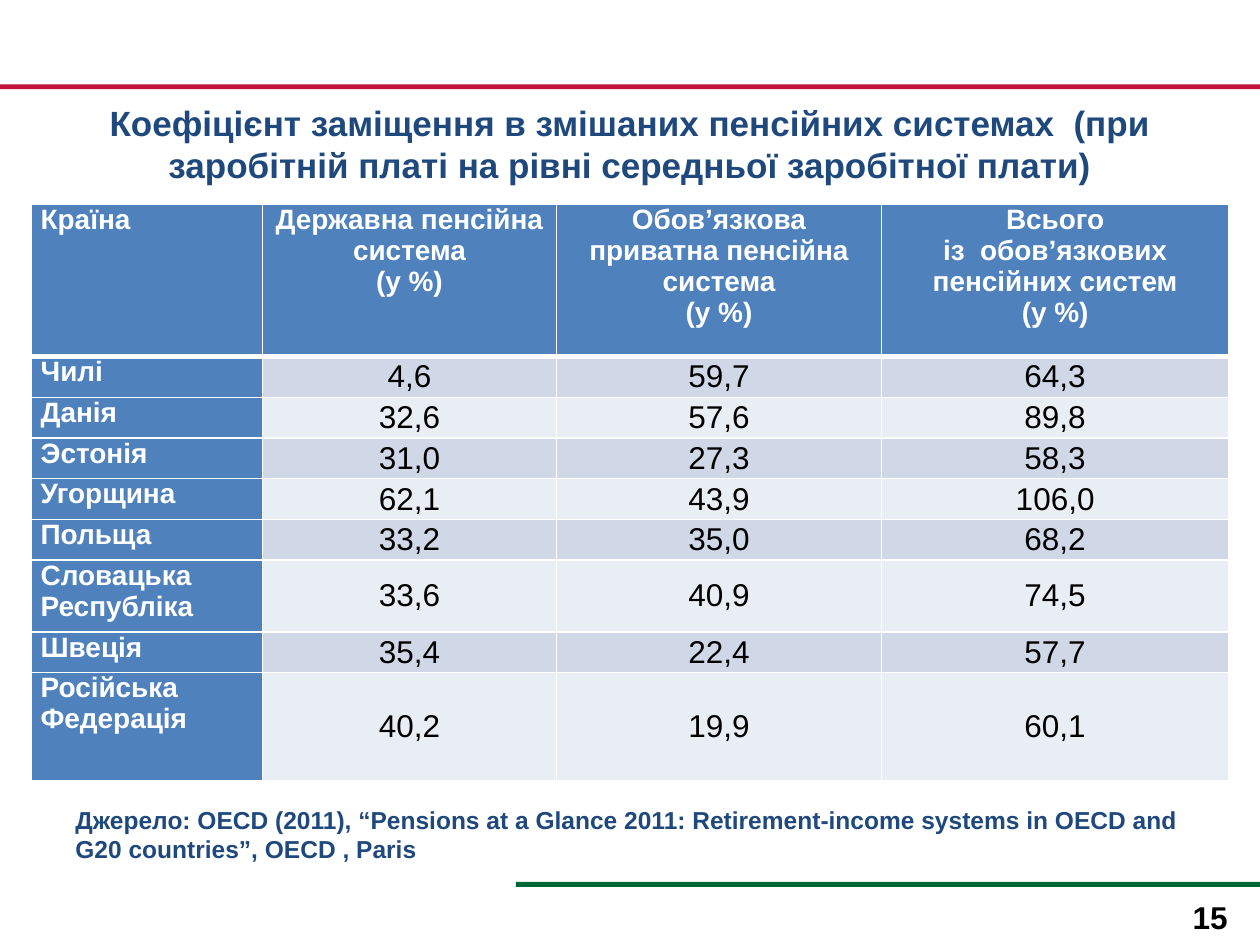
from dataclasses import dataclass
from typing import NamedTuple

from lxml.etree import SubElement
from pptx import Presentation
from pptx.dml.color import RGBColor
from pptx.enum.shapes import MSO_SHAPE
from pptx.enum.text import MSO_ANCHOR, PP_ALIGN
from pptx.oxml.ns import qn
from pptx.util import Cm, Pt


@dataclass(frozen=True)
class Theme:
    font: str = "Arial"
    white: str = "FFFFFF"
    black: str = "000000"
    navy: str = "1F497D"
    blue: str = "4F81BD"
    bands: tuple[str, str] = ("D0D8E8", "E9EDF4")
    red: str = "C2113A"
    green: str = "006633"
    title: int = 20
    value: int = 18
    heading: int = 16
    source: int = 14
    grid: int = 1
    heading_rule: int = 3


class Box(NamedTuple):
    left: float
    top: float
    width: float
    height: float

    def lengths(self) -> list[Cm]:
        return [Cm(value) for value in self]


class Style(NamedTuple):
    size: int
    color: str
    bold: bool = True
    align: PP_ALIGN = PP_ALIGN.LEFT
    anchor: MSO_ANCHOR = MSO_ANCHOR.TOP


class Country(NamedTuple):
    name: str
    state: str
    private: str
    total: str
    height: float = 0.82


class Column(NamedTuple):
    heading: tuple[str, ...]
    width: float


THEME = Theme()
TABLE_LEFT, TABLE_TOP, HEADING_HEIGHT = 0.64, 4.12, 3.07

COLUMNS = [
    Column(("Країна",), 4.65),
    Column(("Державна пенсійна система", "(у %)"), 5.93),
    Column(("Обов’язкова приватна пенсійна система", "(у %)"), 6.55),
    Column(("Всього", "із  обов’язкових пенсійних систем", "(у %)"), 7),
]

COUNTRIES = [
    Country("Чилі", "4,6", "59,7", "64,3"),
    Country("Данія", "32,6", "57,6", "89,8"),
    Country("Эстонія", "31,0", "27,3", "58,3"),
    Country("Угорщина", "62,1", "43,9", "106,0"),
    Country("Польща", "33,2", "35,0", "68,2"),
    Country("Словацька Республіка", "33,6", "40,9", "74,5", 1.45),
    Country("Швеція", "35,4", "22,4", "57,7"),
    Country("Російська Федерація", "40,2", "19,9", "60,1", 2.18),
]


def write(frame, lines: tuple[str, ...], style: Style) -> None:
    for index, line in enumerate(lines):
        paragraph = frame.add_paragraph() if index else frame.paragraphs[0]
        paragraph.alignment = style.align
        run = paragraph.add_run()
        run.text = line
        run.font.name = THEME.font
        run.font.size = Pt(style.size)
        run.font.bold = style.bold
        run.font.color.rgb = RGBColor.from_string(style.color)


def add_bar(slide, box: Box, color: str) -> None:
    bar = slide.shapes.add_shape(MSO_SHAPE.RECTANGLE, *box.lengths())
    bar.shadow.inherit = False
    bar.fill.solid()
    bar.fill.fore_color.rgb = RGBColor.from_string(color)
    bar.line.fill.background()


def add_text(slide, box: Box, text: str, style: Style) -> None:
    frame = slide.shapes.add_textbox(*box.lengths()).text_frame
    frame.word_wrap = True
    frame.vertical_anchor = style.anchor
    write(frame, (text,), style)


def add_borders(cell, top: int, bottom: int) -> None:
    properties = cell._tc.get_or_add_tcPr()
    sides = {"a:lnL": THEME.grid, "a:lnR": THEME.grid, "a:lnT": top, "a:lnB": bottom}
    for side, width in sides.items():
        line = SubElement(properties, qn(side), w=str(Pt(width)))
        fill = SubElement(line, qn("a:solidFill"))
        SubElement(fill, qn("a:srgbClr"), val=THEME.white)


def fill_cell(cell, lines: tuple[str, ...], style: Style, fill: str,
              top: int, bottom: int) -> None:
    add_borders(cell, top, bottom)
    cell.fill.solid()
    cell.fill.fore_color.rgb = RGBColor.from_string(fill)
    cell.margin_left = cell.margin_right = Cm(0.18)
    cell.margin_top = cell.margin_bottom = 0
    cell.vertical_anchor = style.anchor
    write(cell.text_frame, lines, style)


def add_rates(slide) -> None:
    heights = [HEADING_HEIGHT] + [country.height for country in COUNTRIES]
    box = Box(TABLE_LEFT, TABLE_TOP, sum(column.width for column in COLUMNS), sum(heights))
    table = slide.shapes.add_table(len(heights), len(COLUMNS), *box.lengths()).table
    for row, height in zip(table.rows, heights):
        row.height = Cm(height)

    name_style = Style(THEME.heading, THEME.white)
    heading_style = name_style._replace(align=PP_ALIGN.CENTER)
    value_style = Style(THEME.value, THEME.black, False, PP_ALIGN.CENTER, MSO_ANCHOR.MIDDLE)

    for index, column in enumerate(COLUMNS):
        table.columns[index].width = Cm(column.width)
        fill_cell(table.cell(0, index), column.heading,
                  heading_style if index else name_style,
                  THEME.blue, THEME.grid, THEME.heading_rule)

    for row, country in enumerate(COUNTRIES, start=1):
        top = THEME.heading_rule if row == 1 else THEME.grid
        band = THEME.bands[(row - 1) % 2]
        fill_cell(table.cell(row, 0), (country.name,), name_style, THEME.blue, top, THEME.grid)
        values = (country.state, country.private, country.total)
        for index, value in enumerate(values, start=1):
            fill_cell(table.cell(row, index), (value,), value_style, band, top, THEME.grid)


def main() -> None:
    presentation = Presentation()
    presentation.slide_width, presentation.slide_height = Cm(25.4), Cm(19.05)
    slide = presentation.slides.add_slide(presentation.slide_layouts[6])

    add_bar(slide, Box(0, 1.7, 25.4, 0.1), THEME.red)
    add_bar(slide, Box(10.4, 17.78, 15, 0.1), THEME.green)
    add_rates(slide)
    add_text(
        slide, Box(0.85, 1.8, 23.7, 2.2),
        "Коефіцієнт заміщення в змішаних пенсійних системах  "
        "(при заробітній платі на рівні середньої заробітної плати)",
        Style(THEME.title, THEME.navy, align=PP_ALIGN.CENTER, anchor=MSO_ANCHOR.MIDDLE),
    )
    add_text(
        slide, Box(1.27, 16.1, 23.3, 1.78),
        "Джерело: OECD (2011), “Pensions at a Glance 2011: "
        "Retirement-income systems in OECD and G20 countries”, OECD , Paris",
        Style(THEME.source, THEME.navy),
    )
    add_text(slide, Box(23.7, 17.98, 1.3, 0.85), "15",
             Style(THEME.value, THEME.black, align=PP_ALIGN.RIGHT))
    presentation.save("out.pptx")


if __name__ == "__main__":
    main()
